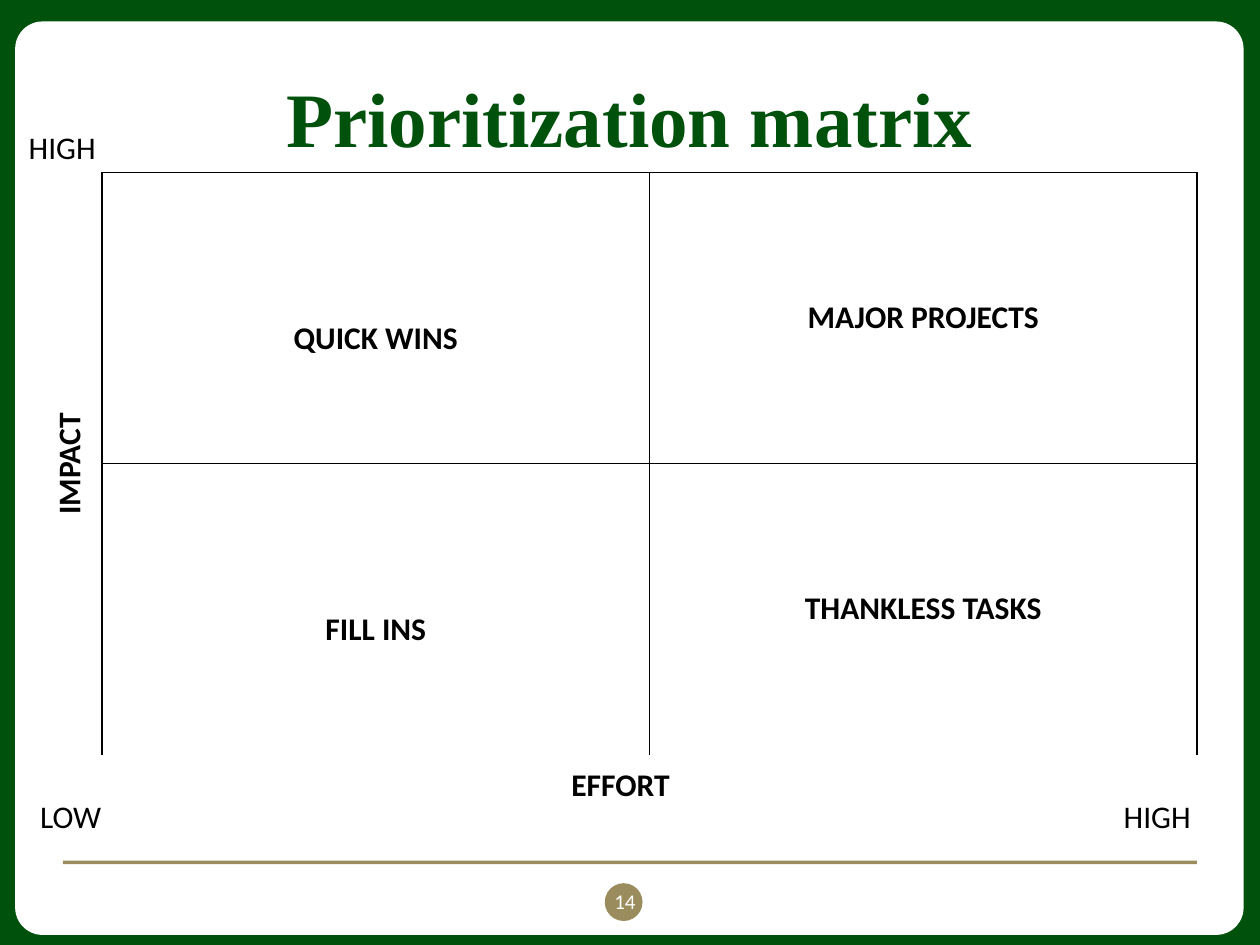
import pptx
import pptx.util
import pptx.dml.color
import pptx.enum.shapes
import pptx.enum.text
import pptx.oxml.ns
from lxml import etree

Inches = pptx.util.Inches
SHAPE = pptx.enum.shapes.MSO_SHAPE
ALIGN = pptx.enum.text.PP_ALIGN
ANCHOR = pptx.enum.text.MSO_ANCHOR

COLORS = {"green": "00510B", "gold": "9A8C5C", "white": "FFFFFF", "black": "000000"}
BODY = {"name": "Calibri", "size": pptx.util.Pt(18)}
BOLD = {**BODY, "bold": True}
NUMBER = {**BODY, "size": pptx.util.Pt(12)}
HEADING = {"name": "Times New Roman", "size": pptx.util.Pt(44), "bold": True}
COLUMN_WIDTHS = [0.46, 4.345, 4.345]
ROW_HEIGHTS = [2.31, 2.31, 0.49]
QUADRANTS = [["QUICK WINS", "MAJOR PROJECTS"], ["FILL INS", "THANKLESS TASKS"]]


def color_of(name):
    return pptx.dml.color.RGBColor.from_string(COLORS[name])


def write_text(frame, text, values, color="black", align=ALIGN.CENTER):
    frame.text = text
    paragraph = frame.paragraphs[0]
    paragraph.alignment = align
    for name, value in values.items():
        setattr(paragraph.font, name, value)
    paragraph.font.color.rgb = color_of(color)


def add_panel(slide, kind, box, color):
    shape = slide.shapes.add_shape(kind, *map(Inches, box))
    shape.shadow.inherit = False
    shape.fill.solid()
    shape.fill.fore_color.rgb = color_of(color)
    shape.line.fill.background()
    return shape


def add_label(slide, box, text, values=BODY, color="black", align=ALIGN.LEFT, wrap=False):
    label = slide.shapes.add_textbox(*map(Inches, box))
    label.text_frame.word_wrap = wrap
    write_text(label.text_frame, text, values, color, align)


def place_title(slide, text):
    title = slide.shapes.title
    title.left, title.top, title.width, title.height = map(Inches, (0.5, 0.3, 9, 1.25))
    title.text_frame.vertical_anchor = ANCHOR.MIDDLE
    write_text(title.text_frame, text, HEADING, "green")
    title.element.getparent().append(title.element)


def set_borders(cell, sides):
    properties = cell._tc.get_or_add_tcPr()
    for side in "LRTB":
        line = etree.SubElement(properties, pptx.oxml.ns.qn(f"a:ln{side}"), w="12700")
        if side in sides:
            fill = etree.SubElement(line, pptx.oxml.ns.qn("a:solidFill"))
            etree.SubElement(fill, pptx.oxml.ns.qn("a:srgbClr"), val=COLORS["black"])
        else:
            etree.SubElement(line, pptx.oxml.ns.qn("a:noFill"))


def borders_at(row, column):
    if row == 2:
        return ""
    if column == 0:
        return "R"
    return "LRTB" if row == 0 else "LRT"


def add_matrix(slide):
    frame = slide.shapes.add_table(3, 3, Inches(0.35), Inches(1.37), Inches(9.15), Inches(5.11))
    table = frame.table
    table.first_row = table.horz_banding = False
    for column, width in zip(table.columns, COLUMN_WIDTHS):
        column.width = Inches(width)
    for row, height in zip(table.rows, ROW_HEIGHTS):
        row.height = Inches(height)
    for row in range(3):
        for column in range(3):
            cell = table.cell(row, column)
            set_borders(cell, borders_at(row, column))
            cell.fill.background()
            cell.vertical_anchor = ANCHOR.MIDDLE
    impact, effort = table.cell(0, 0), table.cell(2, 0)
    impact.merge(table.cell(1, 0))
    effort.merge(table.cell(2, 2))
    impact._tc.get_or_add_tcPr().set("vert", "vert270")
    write_text(impact.text_frame, "IMPACT", BOLD)
    write_text(effort.text_frame, "EFFORT", BOLD)
    for row, names in enumerate(QUADRANTS):
        for column, name in enumerate(names, 1):
            write_text(table.cell(row, column).text_frame, name, BOLD)
        table.cell(row, 1).margin_top = Inches(0.37)


def main():
    presentation = pptx.Presentation()
    presentation.slide_width, presentation.slide_height = Inches(10), Inches(7.5)
    slide = presentation.slides.add_slide(presentation.slide_layouts[5])
    slide.background.fill.solid()
    slide.background.fill.fore_color.rgb = color_of("green")
    card = add_panel(slide, SHAPE.ROUNDED_RECTANGLE, (0.12, 0.17, 9.75, 7.25), "white")
    card.adjustments[0] = 0.03
    add_panel(slide, SHAPE.OVAL, (4.8, 7.01, 0.3, 0.3), "gold")
    add_panel(slide, SHAPE.RECTANGLE, (0.5, 6.83, 9, 0.03), "gold")
    place_title(slide, "Prioritization matrix")
    add_label(slide, (4.75, 7, 0.42, 0.35), "14", NUMBER, "white", ALIGN.CENTER, True)
    add_matrix(slide)
    add_label(slide, (0.13, 0.97, 0.74, 0.4), "HIGH")
    add_label(slide, (8.82, 6.28, 0.74, 0.4), "HIGH")
    add_label(slide, (0.22, 6.28, 0.69, 0.4), "LOW")
    presentation.save("out.pptx")


if __name__ == "__main__":
    main()
